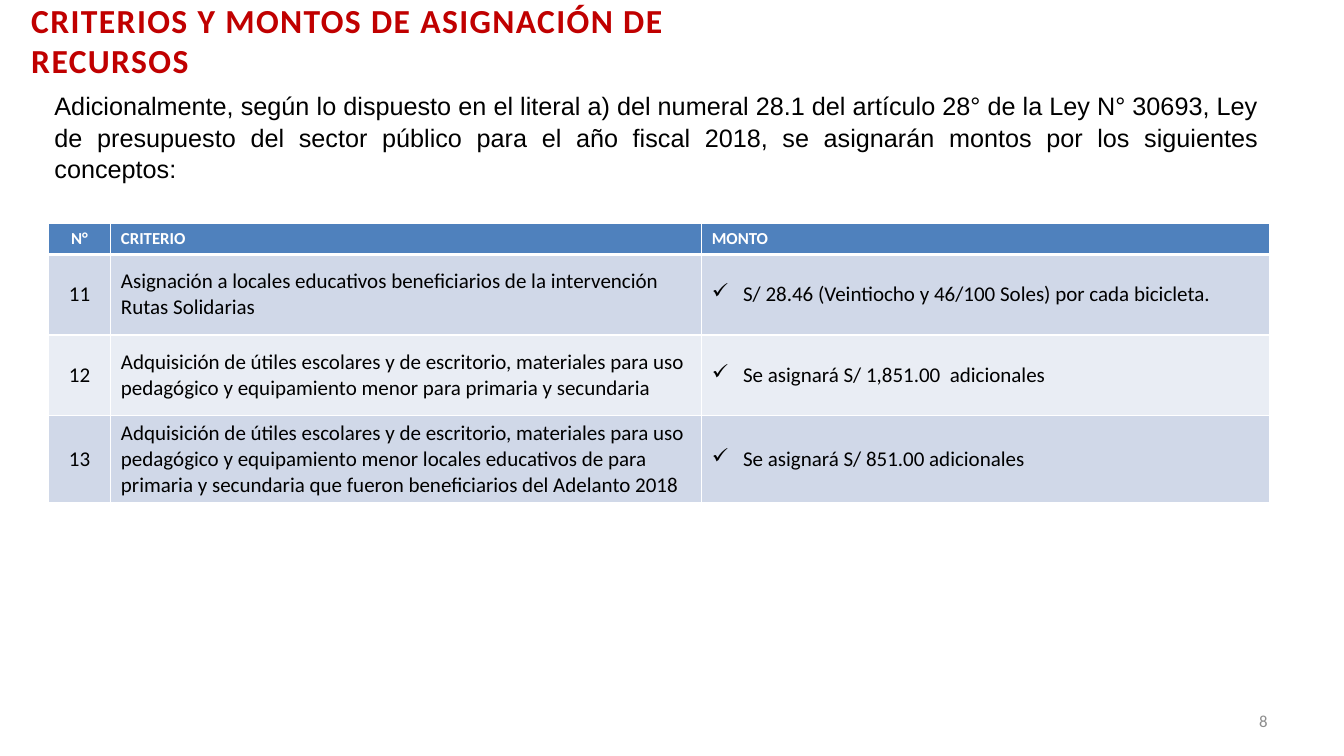
from lxml import etree
from pptx import Presentation
from pptx.dml.color import RGBColor
from pptx.enum.text import MSO_ANCHOR, MSO_AUTO_SIZE, PP_ALIGN
from pptx.oxml.ns import qn
from pptx.util import Inches, Pt

LEFT, CENTER, RIGHT = PP_ALIGN.LEFT, PP_ALIGN.CENTER, PP_ALIGN.RIGHT
JUSTIFY = PP_ALIGN.JUSTIFY
TOP, MIDDLE = MSO_ANCHOR.TOP, MSO_ANCHOR.MIDDLE
FIXED = MSO_AUTO_SIZE.NONE

COLORS = {"red": "C00000", "black": "000000", "white": "FFFFFF",
          "gray": "8C8C8C", "head": "4F81BD", "dark": "D0D8E8",
          "light": "E9EDF4"}

TITLE = "CRITERIOS Y MONTOS DE ASIGNACIÓN DE RECURSOS"
INTRO = ("Adicionalmente, según lo dispuesto en el literal a) del numeral 28.1 "
         "del artículo 28° de la Ley N° 30693, Ley de presupuesto del sector "
         "público para el año fiscal 2018, se asignarán montos por los "
         "siguientes conceptos:")
ROWS = [
    ("N°", "CRITERIO", "MONTO"),
    ("11", "Asignación a locales educativos beneficiarios de la intervención "
     "Rutas Solidarias",
     "S/ 28.46 (Veintiocho y 46/100 Soles) por cada bicicleta."),
    ("12", "Adquisición de útiles escolares y de escritorio, materiales para "
     "uso pedagógico y equipamiento menor para primaria y secundaria",
     "Se asignará S/ 1,851.00  adicionales"),
    ("13", "Adquisición de útiles escolares y de escritorio, materiales para "
     "uso pedagógico y equipamiento menor locales educativos de para primaria "
     "y secundaria que fueron beneficiarios del Adelanto 2018",
     "Se asignará S/ 851.00 adicionales"),
]
WIDTHS = (0.62, 5.86, 5.63)
HEIGHTS = (0.29, 0.8, 0.8, 0.86)


def color(name):
    """Return the named color."""
    return RGBColor.from_string(COLORS[name])


def place(shape, box):
    """Move a shape to a box given in inches."""
    shape.left, shape.top, shape.width, shape.height = map(Inches, box)


def write(frame, text, size, hue, align=LEFT, bold=False, face="Calibri"):
    """Write one run in the first paragraph and return both."""
    para = frame.paragraphs[0]
    para.alignment = align
    run = para.add_run()
    run.text = text
    font = run.font
    font.name, font.size, font.bold = face, Pt(size), bold
    font.color.rgb = color(hue)
    return para, run


def add_title(slide, box):
    """Fill the title placeholder with spaced capitals."""
    title = slide.shapes.title
    place(title, box)
    frame = title.text_frame
    frame.word_wrap, frame.auto_size = True, FIXED
    frame.vertical_anchor = MIDDLE
    frame.margin_top = frame.margin_bottom = 0
    run = write(frame, TITLE, 24, "red", bold=True)[1]
    run.font._element.set("spc", "100")


def add_intro(slide, box):
    """Fill the body placeholder with the justified paragraph."""
    body = slide.placeholders[1]
    place(body, box)
    frame = body.text_frame
    frame.word_wrap, frame.auto_size = True, FIXED
    frame.vertical_anchor = TOP
    props = frame.paragraphs[0]._p.get_or_add_pPr()
    props.set("marL", "0")
    props.set("indent", "0")
    etree.SubElement(props, qn("a:buNone"))
    para = write(frame, INTRO, 18, "black", JUSTIFY, face="Arial")[0]
    para.space_before = Pt(0)
    para.line_spacing = 1.05


def add_edges(cell, base):
    """Draw white cell borders with the given bottom width."""
    props = cell._tc.get_or_add_tcPr()
    for side, width in zip("LRTB", (1, 1, 1, base)):
        line = etree.SubElement(props, qn(f"a:ln{side}"), w=str(Pt(width)))
        fill = etree.SubElement(line, qn("a:solidFill"))
        etree.SubElement(fill, qn("a:srgbClr"), val=COLORS["white"])


def add_check(para):
    """Give a paragraph a check mark bullet."""
    props = para._p.get_or_add_pPr()
    props.set("marL", str(Inches(0.31)))
    props.set("indent", str(-Inches(0.31)))
    etree.SubElement(props, qn("a:buChar"), char="✓")


def add_grid(slide, left, top):
    """Build the table of criteria and amounts."""
    shape = slide.shapes.add_table(
        len(ROWS), len(WIDTHS), Inches(left), Inches(top),
        Inches(sum(WIDTHS)), Inches(sum(HEIGHTS)))
    table = shape.table
    for col, width in zip(table.columns, WIDTHS):
        col.width = Inches(width)
    for row, height in zip(table.rows, HEIGHTS):
        row.height = Inches(height)
    for r, texts in enumerate(ROWS):
        head = r == 0
        tint = "head" if head else ("light", "dark")[r % 2]
        size, hue = (12, "white") if head else (15, "black")
        for c, text in enumerate(texts):
            cell = table.cell(r, c)
            add_edges(cell, 3 if head or False else 1)
            cell.fill.solid()
            cell.fill.fore_color.rgb = color(tint)
            cell.vertical_anchor = TOP if head else MIDDLE
            if c == 2 and not head:
                add_check(cell.text_frame.paragraphs[0])
            write(cell.text_frame, text, size, hue,
                  CENTER if c == 0 else LEFT, head)


def add_page(slide, box):
    """Write the page number."""
    frame = slide.shapes.add_textbox(*map(Inches, box)).text_frame
    frame.word_wrap = True
    frame.vertical_anchor = MIDDLE
    write(frame, "8", 12, "gray", RIGHT)


def main():
    """Build and save the slide."""
    deck = Presentation()
    deck.slide_width, deck.slide_height = Inches(13.33), Inches(7.5)
    slide = deck.slides.add_slide(deck.slide_layouts[1])
    add_title(slide, (0.21, 0, 7.67, 0.8))
    add_intro(slide, (0.44, 0.83, 12.14, 1.06))
    add_grid(slide, 0.48, 2.22)
    add_page(slide, (9.56, 6.95, 3.11, 0.4))
    deck.save("out.pptx")


if __name__ == "__main__":
    main()
